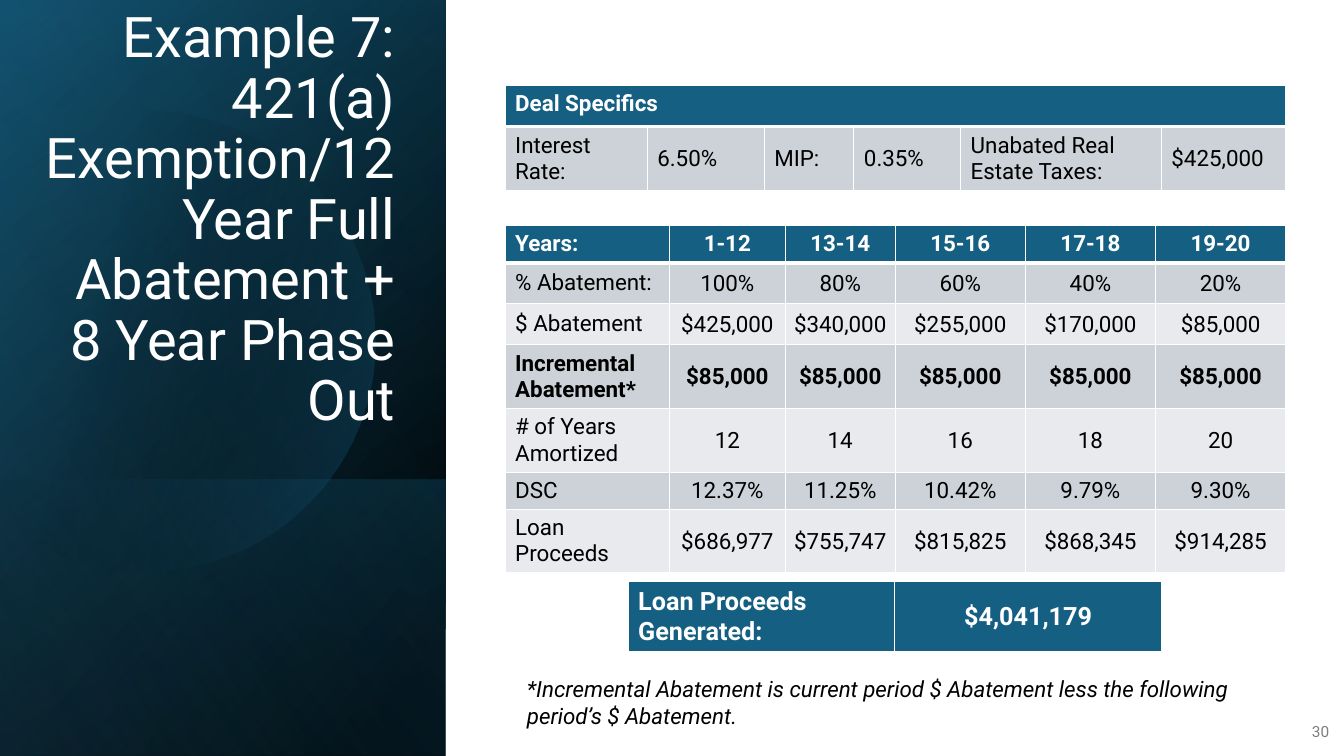
from lxml import etree
from pptx import Presentation as Deck
from pptx.dml.color import RGBColor as Rgb
from pptx.enum.shapes import MSO_SHAPE as Shape
from pptx.enum.text import MSO_ANCHOR as Anchor, PP_ALIGN as Align
from pptx.oxml.ns import qn
from pptx.util import Cm, Pt

COLORS = {
    "white": "FFFFFF", "black": "000000", "gray": "808080",
    "blue": "156082", "navy": "104862", "sky": "46B1E1",
    "dark": "CCD2D8", "light": "E8EAED",
}
FONT = "Roboto"
WIDE, HIGH = 33.87, 19.05

DEAL = [
    ["Deal Specifics"] + [""] * 5,
    ["Interest Rate:", "6.50%", "MIP:", "0.35%",
     "Unabated Real Estate Taxes:", "$425,000"],
]
YEARS = [
    ["Years:", "1-12", "13-14", "15-16", "17-18", "19-20"],
    ["% Abatement:", "100%", "80%", "60%", "40%", "20%"],
    ["$ Abatement", "$425,000", "$340,000", "$255,000", "$170,000", "$85,000"],
    ["Incremental Abatement*"] + ["$85,000"] * 5,
    ["# of Years Amortized", "12", "14", "16", "18", "20"],
    ["DSC", "12.37%", "11.25%", "10.42%", "9.79%", "9.30%"],
    ["Loan Proceeds", "$686,977", "$755,747", "$815,825", "$868,345", "$914,285"],
]
LOAN = [["Loan Proceeds Generated:", "$4,041,179"]]


def write(frame, text, size=16, color="black", bold=False, italic=False,
          align=Align.LEFT, space=None):
    frame.word_wrap = True
    para = frame.paragraphs[0]
    para.alignment = align
    if space:
        para.line_spacing = space
    run = para.add_run()
    run.text = text
    font = run.font
    font.name, font.size = FONT, Pt(size)
    font.bold, font.italic = bold, italic
    font.color.rgb = Rgb.from_string(COLORS[color])


def label(slide, box, text, anchor=Anchor.TOP, **style):
    frame = slide.shapes.add_textbox(*map(Cm, box)).text_frame
    frame.vertical_anchor = anchor
    write(frame, text, **style)


def blend(shape, stops, angle):
    shape.shadow.inherit = False
    shape.line.fill.background()
    shape.fill.gradient()
    grad = shape.element.spPr.find(qn("a:gradFill"))
    for child in list(grad):
        grad.remove(child)
    grad.set("rotWithShape", "1")
    row = etree.SubElement(grad, qn("a:gsLst"))
    for place, color, alpha in stops:
        stop = etree.SubElement(row, qn("a:gs"), pos=str(place * 1000))
        tint = etree.SubElement(stop, qn("a:srgbClr"), val=COLORS[color])
        if alpha < 100:
            etree.SubElement(tint, qn("a:alpha"), val=str(alpha * 1000))
    etree.SubElement(grad, qn("a:lin"), ang=str(angle * 60000), scaled="0")


def panel(slide, box, stops, angle):
    left, top, wide, high = box
    shift = (wide - high) / 2
    shape = slide.shapes.add_shape(
        Shape.RECTANGLE, Cm(left + shift), Cm(top - shift), Cm(high), Cm(wide))
    shape.rotation = 90
    shape.element.spPr.find(qn("a:xfrm")).set("flipH", "1")
    blend(shape, stops, angle)


def curve(start, one, two, end, steps=24):
    for step in range(1, steps + 1):
        t = step / steps
        u = 1 - t
        yield tuple(u**3 * a + 3 * u * u * t * b + 3 * u * t * t * c + t**3 * d
                    for a, b, c, d in zip(start, one, two, end))


def disc(slide, box):
    left, top = box[:2]
    start = (3.78, 2.79)
    arcs = [
        [(6.25, 2.84), (8.51, 4.5), (9.22, 6.99)],
        [(10.11, 10.08), (8.33, 13.28), (5.26, 14.17)],
        [(3.33, 14.73), (1.35, 14.25), (0, 13.06)],
    ]
    last = [(0.58, 3.61), (1.27, 3.25), (2.03, 3.02)]
    close = [(2.62, 2.87), (3.2, 2.79), start]
    points, pen = [], start
    for arc in arcs:
        points += curve(pen, *arc)
        pen = arc[-1]
    pen = (0, 4.09)
    points.append(pen)
    for arc in (last, close):
        points += curve(pen, *arc)
        pen = arc[-1]
    place = [(Cm(left + x), Cm(top + y)) for x, y in points]
    path = slide.shapes.build_freeform(Cm(left + start[0]), Cm(top + start[1]))
    path.add_line_segments(place, close=True)
    blend(path.convert_to_shape(), [(29, "black", 0), (100, "blue", 43)], 14)


def banner(slide, box):
    left, top, wide, high = box
    foot = 6.96
    panel(slide, box, [(8, "black", 100), (100, "navy", 100)], 50)
    panel(slide, box, [(0, "black", 0), (99, "blue", 46)], 30)
    panel(slide, (left, top + high - foot, wide, foot),
          [(2, "blue", 29), (100, "black", 30)], 130)
    disc(slide, box)
    panel(slide, box, [(0, "black", 0), (99, "sky", 11)], 120)
    label(slide, (left + 0.66, top + 1.63, 9.55, 9.4),
          "Example 7: 421(a) Exemption/12 Year Full Abatement + 8 Year Phase Out",
          anchor=Anchor.BOTTOM, size=40, color="white",
          align=Align.RIGHT, space=0.9)


def border(cell, base):
    props = cell._tc.get_or_add_tcPr()
    for side, width in (("L", 1), ("R", 1), ("T", 1), ("B", base)):
        line = etree.SubElement(props, qn("a:ln" + side), w=str(Pt(width)))
        fill = etree.SubElement(line, qn("a:solidFill"))
        etree.SubElement(fill, qn("a:srgbClr"), val=COLORS["white"])


def grid(slide, spot, cols, rows, data, size=16, strong=(), center=True,
         tight=False, middle=False):
    left, top = spot
    table = slide.shapes.add_table(
        len(rows), len(cols), Cm(left), Cm(top), Cm(sum(cols)), Cm(sum(rows))).table
    table.horz_banding = False
    for col, wide in zip(table.columns, cols):
        col.width = Cm(wide)
    for r, (high, texts) in enumerate(zip(rows, data)):
        table.rows[r].height = Cm(high)
        head = r == 0
        shade = "blue" if head else "dark" if r % 2 else "light"
        for c, text in enumerate(texts):
            cell = table.cell(r, c)
            border(cell, 3 if head else 1)
            cell.fill.solid()
            cell.fill.fore_color.rgb = Rgb.from_string(COLORS[shade])
            if middle or not head:
                cell.vertical_anchor = Anchor.MIDDLE
            if tight and c and not head:
                cell.margin_left = cell.margin_right = cell.margin_top = Cm(0.03)
                cell.margin_bottom = 0
            if text:
                write(cell.text_frame, text, size=size,
                      color="white" if head else "black",
                      bold=head or r in strong,
                      align=Align.CENTER if center and c else Align.LEFT)
    return table


def report(slide, box):
    left, top = box[:2]
    grid(slide, (left, top + 5.69), [4.14, 2.92, 2.77] + [3.28] * 3,
         [0.93, 1.03, 1.03, 1.56, 1.56, 0.91, 1.56], YEARS,
         strong=(3,), tight=True)
    grid(slide, (left + 3.1, top + 14.66), [6.72] * 2, [1.68], LOAN,
         size=18, middle=True)
    deal = grid(slide, (left, top + 2.16), [3.58, 2.95, 2.26, 2.69, 5.06, 3.13],
                [1.03, 1.55], DEAL, center=False)
    deal.cell(0, 0).merge(deal.cell(0, 5))
    label(slide, (left + 0.3, top + 16.89, 19.33, 1.63),
          "*Incremental Abatement is current period $ Abatement less "
          "the following period’s $ Abatement.", italic=True)
    label(slide, (left + 19.78, top + 17.93, 1.24, 1.02), "30",
          anchor=Anchor.MIDDLE, size=11, color="gray", align=Align.RIGHT)


def main():
    deck = Deck()
    deck.slide_width, deck.slide_height = Cm(WIDE), Cm(HIGH)
    slide = deck.slides.add_slide(deck.slide_layouts[6])
    banner(slide, (0, 0, 11.23, HIGH))
    report(slide, (12.73, 0, WIDE - 12.73, HIGH))
    deck.save("out.pptx")


if __name__ == "__main__":
    main()
